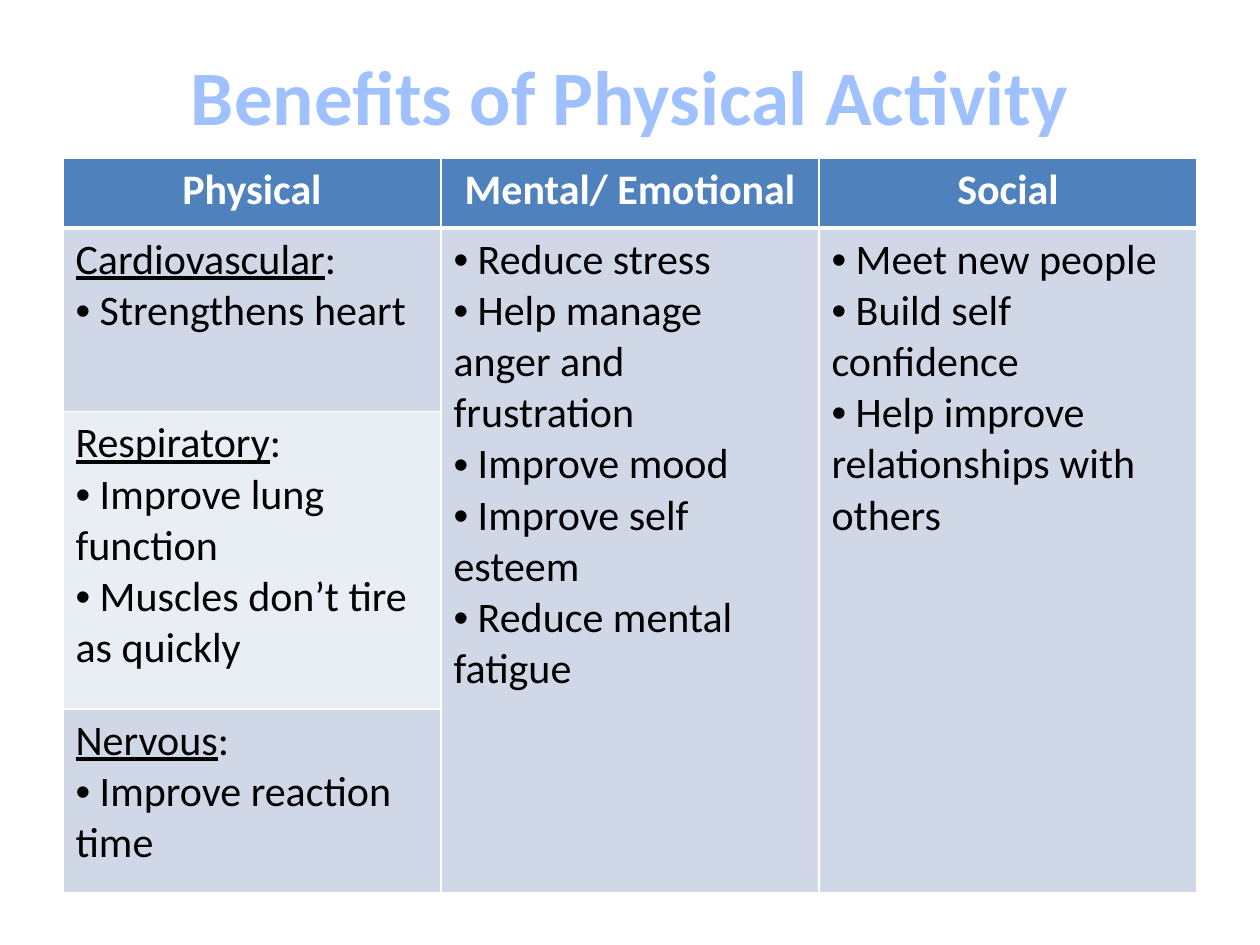
from dataclasses import dataclass

from lxml.etree import SubElement
from pptx import Presentation
from pptx.dml.color import RGBColor as RGB
from pptx.enum.text import MSO_ANCHOR as Anchor, PP_ALIGN as Align
from pptx.oxml import parse_xml
from pptx.oxml.ns import nsdecls, qn
from pptx.util import Pt


@dataclass(frozen=True)
class Theme:
    font: str = "Calibri"
    title_size: int = 44
    body_size: int = 24
    title: str = "A0C1FF"
    header: str = "4F81BD"
    band_dark: str = "D0D8E8"
    band_light: str = "E9EDF4"
    white: str = "FFFFFF"
    black: str = "000000"


THEME = Theme()
LEFT, WIDTH = 36, 648
TABLE_TOP = 90.2
ROW_HEIGHTS = [40, 105, 170, 105]

HEADERS = ["Physical", "Mental/ Emotional", "Social"]
# Each body system: heading, benefits
PHYSICAL = [
    ("Cardiovascular", ["Strengthens heart"]),
    ("Respiratory", ["Improve lung function", "Muscles don’t tire as quickly"]),
    ("Nervous", ["Improve reaction time"]),
]
MENTAL = ["Reduce stress", "Help manage anger and frustration", "Improve mood",
          "Improve self esteem", "Reduce mental fatigue"]
SOCIAL = ["Meet new people", "Build self confidence",
          "Help improve relationships with others"]


def add_run(paragraph, text, size=THEME.body_size, color=THEME.black, **extra):
    run = paragraph.add_run()
    run.text = text
    formats = {"name": THEME.font, "size": Pt(size), "bold": False, **extra}
    for key, value in formats.items():
        setattr(run.font, key, value)
    run.font.color.rgb = RGB.from_string(color)


def add_title(slide, text):
    frame = slide.shapes.add_textbox(Pt(LEFT), Pt(21.6), Pt(WIDTH), Pt(90)).text_frame
    formats = {"word_wrap": True, "vertical_anchor": Anchor.TOP, "margin_top": Pt(6.2)}
    for key, value in formats.items():
        setattr(frame, key, value)
    line = frame.paragraphs[0]
    line.alignment = Align.CENTER
    add_run(line, text, THEME.title_size, THEME.title, bold=True)


def style_cell(cell, fill, top=1, bottom=1):
    cell.fill.solid()
    cell.fill.fore_color.rgb = RGB.from_string(fill)
    # Borders come before the fill in the cell properties
    properties = cell._tc.get_or_add_tcPr()
    borders = {"lnL": 1, "lnR": 1, "lnT": top, "lnB": bottom}
    for place, (side, width) in enumerate(borders.items()):
        properties.insert(place, parse_xml(
            f'<a:{side} {nsdecls("a")} w="{Pt(width)}"><a:solidFill>'
            f'<a:srgbClr val="{THEME.white}"/></a:solidFill></a:{side}>'))


def write_header(cell, text):
    line = cell.text_frame.paragraphs[0]
    line.alignment = Align.CENTER
    add_run(line, text, color=THEME.white, bold=True)


def write_benefits(cell, benefits, heading=None):
    frame = cell.text_frame
    line = frame.paragraphs[0]
    if heading:
        add_run(line, heading, underline=True)
        add_run(line, ":", underline=False)
    for number, benefit in enumerate(benefits):
        if heading or number:
            line = frame.add_paragraph()
        # Wrapped lines return to the cell edge, so the bullet has no indent
        properties = line._p.get_or_add_pPr()
        properties.set("marL", "0")
        properties.set("indent", "0")
        SubElement(properties, qn("a:buFont")).set("typeface", "Arial")
        SubElement(properties, qn("a:buChar")).set("char", "•")
        add_run(line, " " + benefit)


def add_benefits_table(slide):
    table = slide.shapes.add_table(
        len(ROW_HEIGHTS), len(HEADERS), Pt(LEFT), Pt(TABLE_TOP),
        Pt(WIDTH), Pt(sum(ROW_HEIGHTS))).table
    table.horz_banding = False
    for row, height in zip(table.rows, ROW_HEIGHTS):
        row.height = Pt(height)

    # Header row
    for column, header in enumerate(HEADERS):
        style_cell(table.cell(0, column), THEME.header, bottom=3)
        write_header(table.cell(0, column), header)

    # Physical benefits, one body system a row, in alternating bands
    for row, (heading, benefits) in enumerate(PHYSICAL, start=1):
        top = 3 if row == 1 else 1
        band = THEME.band_dark if row % 2 else THEME.band_light
        style_cell(table.cell(row, 0), band, top)
        write_benefits(table.cell(row, 0), benefits, heading)
        for column in (1, 2):
            style_cell(table.cell(row, column), THEME.band_dark, top)

    # Mental and social benefits, each merged over all body rows
    for column, benefits in enumerate([MENTAL, SOCIAL], start=1):
        merged = table.cell(1, column)
        merged.merge(table.cell(len(PHYSICAL), column))
        write_benefits(merged, benefits)


def main():
    deck = Presentation()
    deck.slide_width, deck.slide_height = Pt(720), Pt(540)
    slide = deck.slides.add_slide(deck.slide_layouts[6])
    add_title(slide, "Benefits of Physical Activity")
    add_benefits_table(slide)
    deck.save("out.pptx")


if __name__ == "__main__":
    main()
